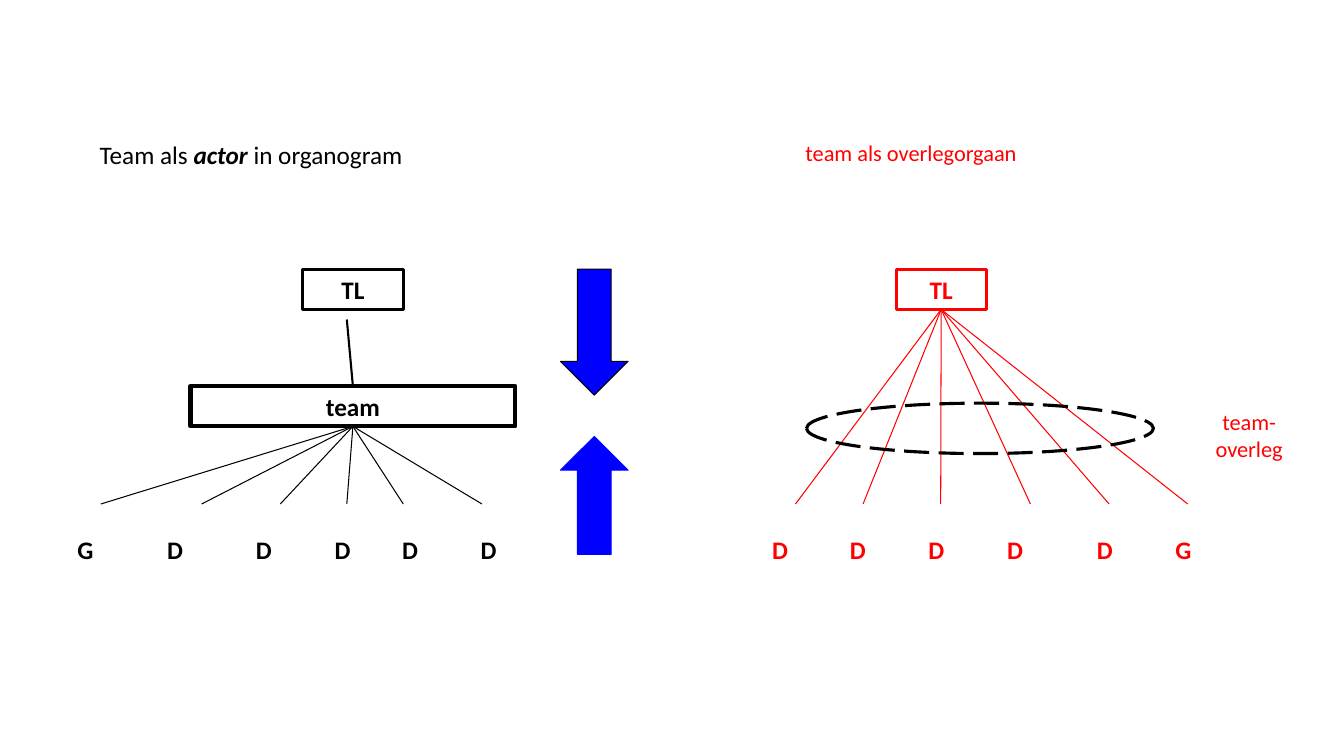
from lxml import etree
from pptx import Presentation
from pptx.dml.color import RGBColor
from pptx.enum.dml import MSO_LINE
from pptx.enum.shapes import MSO_CONNECTOR, MSO_SHAPE
from pptx.enum.text import MSO_ANCHOR, PP_ALIGN
from pptx.oxml.ns import qn
from pptx.util import Inches, Pt

BLACK = RGBColor(0, 0, 0)
RED = RGBColor(255, 0, 0)
BLUE = RGBColor(0, 0, 255)
LEFT, CENTER = PP_ALIGN.LEFT, PP_ALIGN.CENTER
TOP, MIDDLE = MSO_ANCHOR.TOP, MSO_ANCHOR.MIDDLE
RECTANGLE, OVAL = MSO_SHAPE.RECTANGLE, MSO_SHAPE.OVAL
UP_ARROW, DOWN_ARROW = MSO_SHAPE.UP_ARROW, MSO_SHAPE.DOWN_ARROW
STRAIGHT = MSO_CONNECTOR.STRAIGHT
LONG_DASH = MSO_LINE.LONG_DASH
TOP_SIDE, BOTTOM_SIDE = 0, 2

MEMBER_TOP, LINE_END, ROW_HEIGHT = 5.25, 5, 0.4
PLAIN, BOLD = {"bold": False}, {"bold": True}
BOLD_ITALIC = {"bold": True, "italic": True}

TEXTS = [
    ((0.89, 1.33, 4.78, 0.4), LEFT, 18, BLACK,
     [[("Team als ", PLAIN), ("actor", BOLD_ITALIC), (" in organogram", PLAIN)]]),
    ((7.89, 1.33, 4.89, 0.37), LEFT, 16, RED, [[("team als overlegorgaan", PLAIN)]]),
    ((11.67, 4, 1.44, 0.64), CENTER, 16, RED, [[("team-", PLAIN)], [("overleg", PLAIN)]]),
]
BOXES = {
    "team": ("team", (1.89, 3.83, 3.22, ROW_HEIGHT), BLACK, 3),
    "actor leader": ("TL", (3, 2.67, 1, ROW_HEIGHT), BLACK, 2.25),
    "meeting leader": ("TL", (8.89, 2.67, 0.89, ROW_HEIGHT), RED, 2.25),
}
GROUPS = [
    ("team", BLACK, [("G", 0.67, 1), ("D", 1.56, 2), ("D", 2.44, 2.78),
                     ("D", 3.22, 3.44), ("D", 3.89, 4), ("D", 4.67, 4.78)]),
    ("meeting leader", RED, [("D", 7.56, 7.89), ("D", 8.33, 8.56), ("D", 9.11, 9.33),
                             ("D", 9.89, 10.22), ("D", 10.78, 11), ("G", 11.56, 11.78)]),
]
ARROWS = [
    (DOWN_ARROW, (5.56, 2.67, 0.67, 1.25), BLACK),
    (UP_ARROW, (5.56, 4.33, 0.67, 1.17), BLUE),
]


def write(shape, paragraphs, size, color, align, anchor):
    frame = shape.text_frame
    frame.word_wrap = True
    frame.vertical_anchor = anchor
    for index, spans in enumerate(paragraphs):
        para = frame.add_paragraph() if index else frame.paragraphs[0]
        para.alignment = align
        for text, style in spans:
            span = para.add_run()
            span.text = text
            span.font.color.rgb = color
            formats = {"name": "Calibri", "size": Pt(size), **style}
            for name, value in formats.items():
                setattr(span.font, name, value)


def add_text(page, place, align, size, color, paragraphs):
    box = page.shapes.add_textbox(*map(Inches, place))
    write(box, paragraphs, size, color, align, TOP)


def add_outline(page, kind, place, color, width, fill=None):
    shape = page.shapes.add_shape(kind, *map(Inches, place))
    shape.shadow.inherit = False
    if fill is None:
        shape.fill.background()
    else:
        shape.fill.solid()
        shape.fill.fore_color.rgb = fill
    shape.line.color.rgb = color
    shape.line.width = Pt(width)
    return shape


def add_line(page, box, side, end, color, width):
    line = page.shapes.add_connector(STRAIGHT, 0, 0, *map(Inches, end))
    line.begin_connect(box, side)
    line.line.color.rgb = color
    line.line.width = Pt(width)
    etree.SubElement(line._element.spPr, qn("a:effectLst"))


def main():
    deck = Presentation()
    deck.slide_width, deck.slide_height = Inches(13.33), Inches(7.5)
    page = deck.slides.add_slide(deck.slide_layouts[6])

    boxes = {}
    for name, (label, place, color, width) in BOXES.items():
        boxes[name] = add_outline(page, RECTANGLE, place, color, width)
        write(boxes[name], [[(label, BOLD)]], 18, color, CENTER, MIDDLE)
    add_line(page, boxes["team"], TOP_SIDE, (3.44, 3.17), BLACK, 1.5)

    for parent, color, members in GROUPS:
        for label, left, line_x in members:
            add_line(page, boxes[parent], BOTTOM_SIDE, (line_x, LINE_END), color, 0.75)
            place = (left, MEMBER_TOP, 0.67, ROW_HEIGHT)
            add_text(page, place, LEFT, 18, color, [[(label, BOLD)]])

    for kind, place, color in ARROWS:
        add_outline(page, kind, place, color, 0.75, BLUE)
    meeting = add_outline(page, OVAL, (8, 4, 3.44, 0.5), BLACK, 2.25)
    meeting.line.dash_style = LONG_DASH

    for text in TEXTS:
        add_text(page, *text)
    deck.save("out.pptx")


if __name__ == "__main__":
    main()
